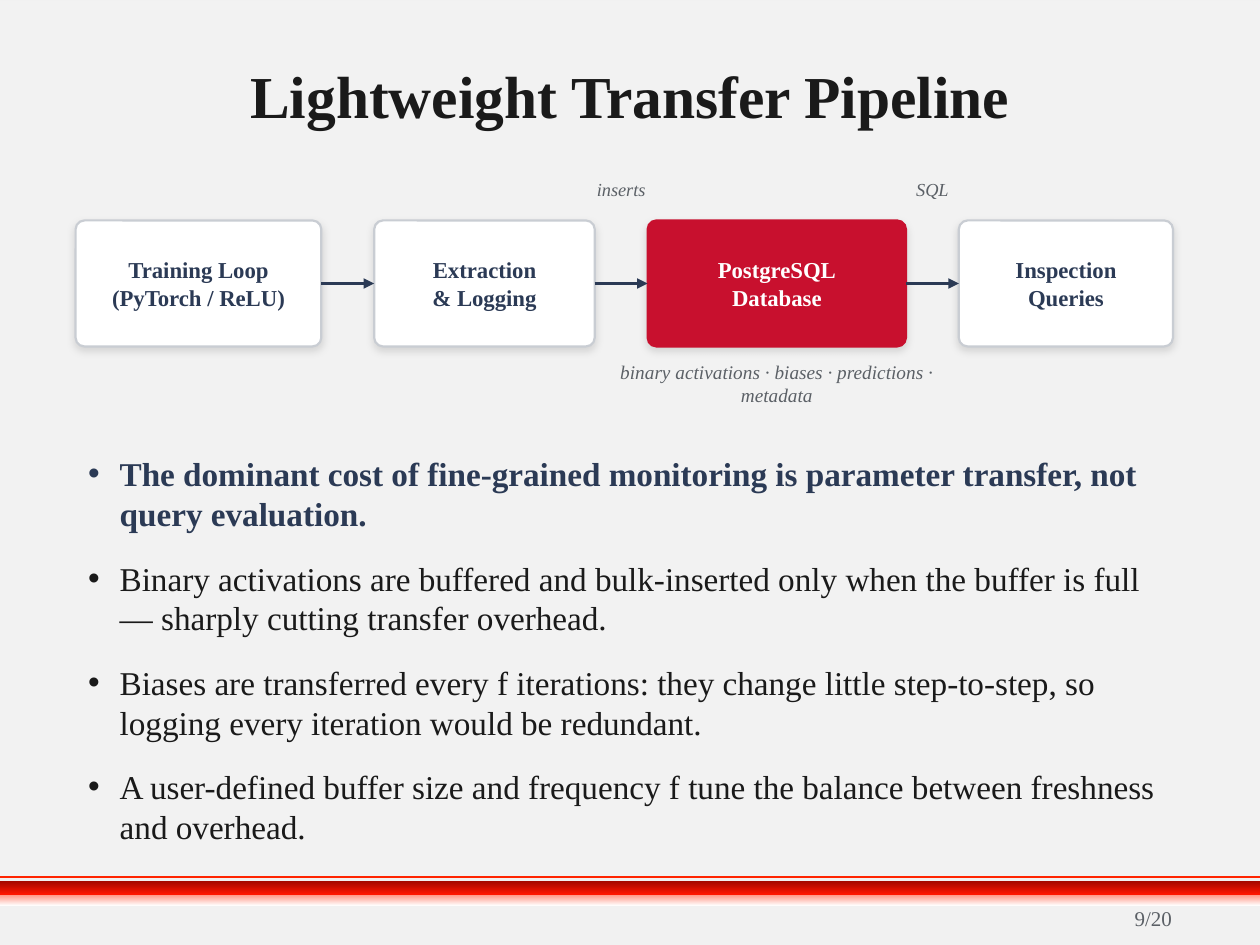
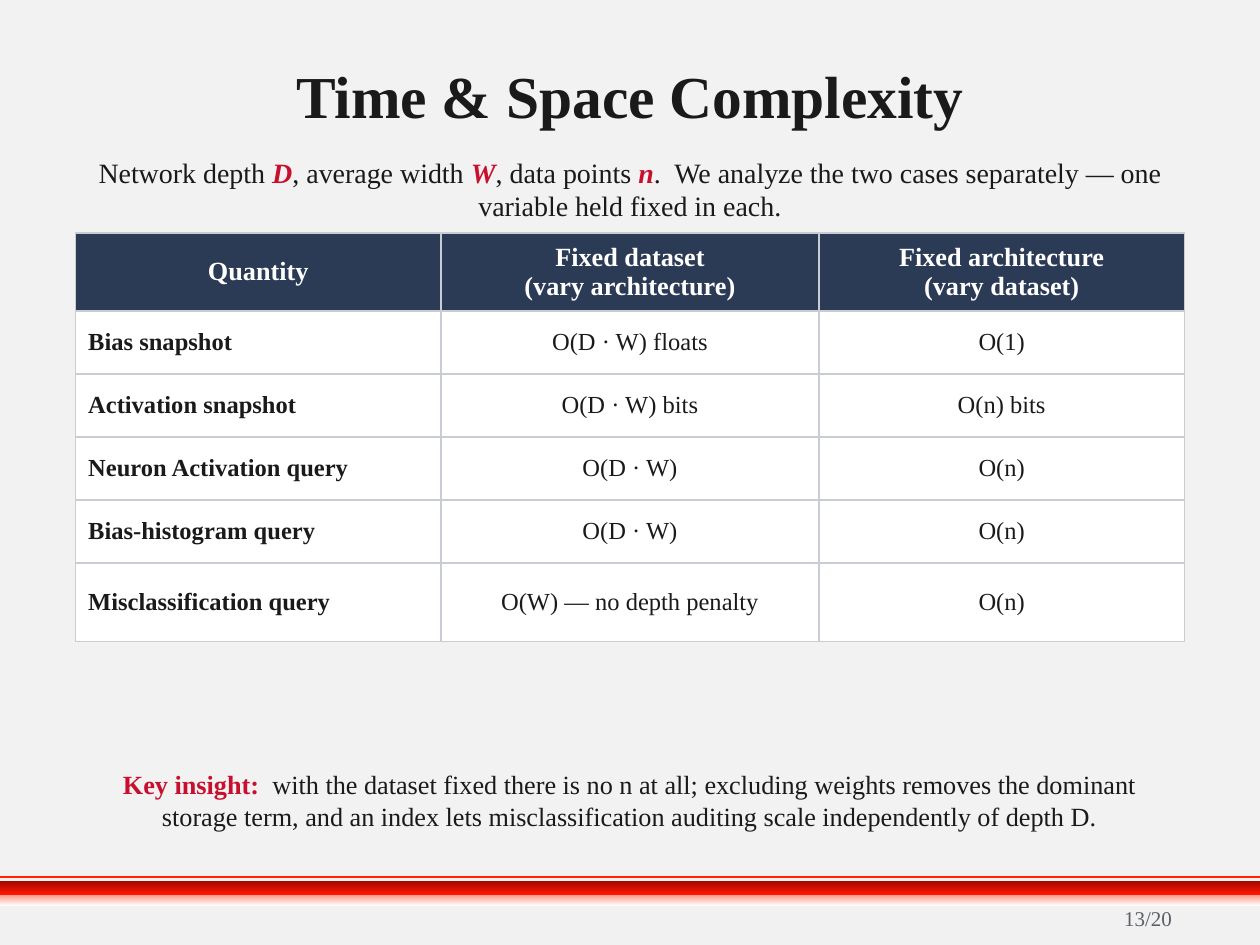
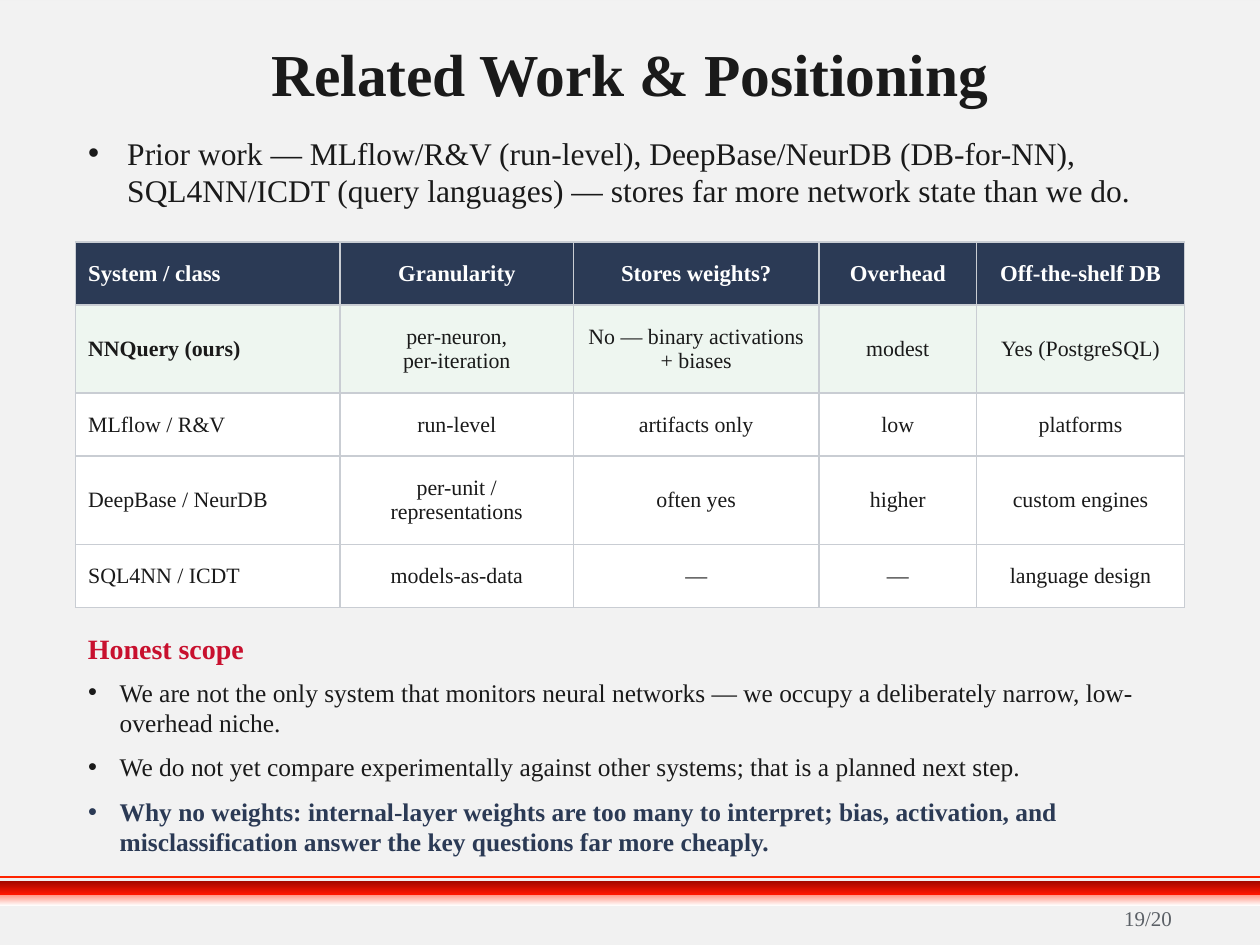
from lxml import etree
from pptx import Presentation
from pptx import util as u
from pptx.dml.color import RGBColor
from pptx.enum import shapes, text
from pptx.oxml import parse_xml
from pptx.oxml.ns import qn

NAVY = RGBColor(0x2B, 0x3A, 0x55)
RED = RGBColor(0xC8, 0x10, 0x2E)
DARK = RGBColor(0x1A, 0x1A, 0x1A)
GREY = RGBColor(0x5B, 0x60, 0x66)
EDGE = RGBColor(0xC9, 0xCD, 0xD3)
WHITE = RGBColor(0xFF, 0xFF, 0xFF)
MINT = RGBColor(0xEE, 0xF6, 0xF0)
PAPER = RGBColor(0xF2, 0xF2, 0xF2)
BACK = RGBColor(0xF1, 0xF1, 0xF1)
FLAME = RGBColor(0xFF, 0x24, 0x00)
RUST = RGBColor(0xA0, 0x08, 0x00)
BLAZE = RGBColor(0xFF, 0x16, 0x00)
FACE = "Times New Roman"
LEFT, MID, RIGHT = text.PP_ALIGN.LEFT, text.PP_ALIGN.CENTER, text.PP_ALIGN.RIGHT
NS = 'xmlns:a="http://schemas.openxmlformats.org/drawingml/2006/main"'

deck = Presentation()
deck.slide_width, deck.slide_height = u.Inches(10), u.Inches(7.5)
COL, ROW = deck.slide_width / 100, deck.slide_height / 75
EDGE_X, SPAN = 6, 88


def spot(x, y, w, h):
    return [u.Emu(round(n)) for n in (x * COL, y * ROW, w * COL, h * ROW)]


def ink(frame, words, size, color, bold=False, side=MID, slant=False, pad=None):
    frame.text = words
    frame.word_wrap = True
    frame.vertical_anchor = text.MSO_ANCHOR.MIDDLE
    if pad is not None:
        frame.margin_left = frame.margin_right = pad
        frame.margin_top = frame.margin_bottom = pad
    for para in frame.paragraphs:
        para.alignment = side
        for run in para.runs:
            font = run.font
            font.name, font.size, font.color.rgb = FACE, u.Pt(size), color
            font.bold, font.italic = bold, slant


pages = []
for kind, name, top, num in [
    (1, "Lightweight Transfer Pipeline", 2.8, "9/20"),
    (5, "Time & Space Complexity", 2.8, "13/20"),
    (3, "Related Work & Positioning", 1, "19/20"),
]:
    page = deck.slides.add_slide(deck.slide_layouts[kind])
    head = page.shapes.title
    head.left, head.top, head.width, head.height = spot(4, top, 92, 9.5)
    ink(head.text_frame, name, 34, DARK, True, pad=0)
    head.text_frame.auto_size = text.MSO_AUTO_SIZE.NONE
    foot = page.shapes.add_textbox(*spot(86, 71.4, 8, 3))
    ink(foot.text_frame, num, 12, GREY, side=RIGHT)
    pages.append(page)
flow, cost, work = pages

master = deck.slide_master
master.background.fill.solid()
master.background.fill.fore_color.rgb = BACK
parts = []
for y, h, tones in [
    (0.1, 69.6, [PAPER]),
    (70.1, 1.8, [FLAME, WHITE]),
    (69.9, 1.1, [RUST, BLAZE]),
]:
    band = flow.shapes.add_shape(shapes.MSO_SHAPE.RECTANGLE, *spot(0, y, 100, h))
    band.shadow.inherit = False
    band.line.fill.background()
    if len(tones) == 1:
        band.fill.solid()
        band.fill.fore_color.rgb = tones[0]
    else:
        band.fill.gradient()
        band.fill.gradient_angle = 270
        for stop, tone in zip(band.fill.gradient_stops, tones):
            stop.color.rgb = tone
    parts.append(band)
x, y, w, h = spot(0, 69.6, 100, 0)
rule = flow.shapes.add_connector(shapes.MSO_CONNECTOR.STRAIGHT, x, y, w, y)
rule.line.color.rgb, rule.line.width = FLAME, u.Pt(0.75)
etree.SubElement(rule.element.spPr, qn("a:effectLst"))
parts.append(rule)
for i, part in enumerate(parts):
    part.element.xpath(".//p:cNvPr")[0].set("id", str(20 + i))
    master.shapes.element.append(part.element)

GAP = 4.2
left, prev = EDGE_X, None
for words, wide, fill, edge, color, note in [
    ("Training Loop\n(PyTorch / ReLU)", 19.5, WHITE, EDGE, NAVY, ""),
    ("Extraction\n& Logging", 17.5, WHITE, EDGE, NAVY, ""),
    ("PostgreSQL\nDatabase", 20.5, RED, RED, WHITE, "inserts"),
    ("Inspection\nQueries", 17, WHITE, EDGE, NAVY, "SQL"),
]:
    step = flow.shapes.add_shape(
        shapes.MSO_SHAPE.ROUNDED_RECTANGLE, *spot(left, 17.5, wide, 10))
    step.adjustments[0] = 0.07
    step.fill.solid()
    step.fill.fore_color.rgb = fill
    step.line.color.rgb, step.line.width = edge, u.Pt(1.25)
    step.shadow.inherit = False
    glow = step.element.spPr.find(qn("a:effectLst"))
    glow.append(parse_xml(
        f'<a:outerShdw {NS} blurRad="{u.Pt(5)}" dist="{u.Pt(2)}" dir="5400000" '
        'algn="bl" rotWithShape="0"><a:srgbClr val="000000">'
        '<a:alpha val="12000"/></a:srgbClr></a:outerShdw>'))
    ink(step.text_frame, words, 13, color, True, pad=0)
    if prev:
        link = flow.shapes.add_connector(shapes.MSO_CONNECTOR.STRAIGHT, 0, 0, 0, 0)
        link.begin_connect(prev, 3)
        link.end_connect(step, 1)
        link.line.color.rgb, link.line.width = NAVY, u.Pt(2)
        etree.SubElement(link.line._get_or_add_ln(), qn("a:tailEnd"), type="triangle")
        etree.SubElement(link.element.spPr, qn("a:effectLst"))
    if note:
        tag = flow.shapes.add_textbox(*spot(left - GAP / 2 - 3.1, 13.3, 6.2, 3.5))
        ink(tag.text_frame, note, 10.5, GREY, slant=True, pad=0)
    if fill == RED:
        tag = flow.shapes.add_textbox(*spot(left + wide / 2 - 15.25, 28.7, 30.5, 3.5))
        ink(tag.text_frame, "binary activations · biases · predictions · metadata",
            11, GREY, slant=True, pad=0)
    left, prev = left + wide + GAP, step

for page, top, wides, talls, sizes, lead, own, data in [
    (cost, 18.5, [29, 30, 29], [6.2, 5, 5, 5, 5, 6.2], (15, 14), MID, None, [
        ["Quantity", "Fixed dataset\n(vary architecture)",
         "Fixed architecture\n(vary dataset)"],
        ["Bias snapshot", "O(D · W) floats", "O(1)"],
        ["Activation snapshot", "O(D · W) bits", "O(n) bits"],
        ["Neuron Activation query", "O(D · W)", "O(n)"],
        ["Bias-histogram query", "O(D · W)", "O(n)"],
        ["Misclassification query", "O(W) — no depth penalty", "O(n)"],
    ]),
    (work, 19.2, [21, 18.5, 19.5, 12.5, 16.5], [5, 7, 5, 7, 5], (13, 12.5), LEFT, 1, [
        ["System / class", "Granularity", "Stores weights?", "Overhead",
         "Off-the-shelf DB"],
        ["NNQuery (ours)", "per-neuron,\nper-iteration",
         "No — binary activations\n+ biases", "modest", "Yes (PostgreSQL)"],
        ["MLflow / R&V", "run-level", "artifacts only", "low", "platforms"],
        ["DeepBase / NeurDB", "per-unit /\nrepresentations", "often yes", "higher",
         "custom engines"],
        ["SQL4NN / ICDT", "models-as-data", "—", "—", "language design"],
    ]),
]:
    grid = page.shapes.add_table(
        len(talls), len(wides), *spot(EDGE_X, top, SPAN, sum(talls))).table
    for col, wide in zip(grid.columns, wides):
        col.width = round(wide * COL)
    for row, tall in zip(grid.rows, talls):
        row.height = round(tall * ROW)
    for r, line in enumerate(data):
        for c, words in enumerate(line):
            cell = grid.cell(r, c)
            cell.fill.solid()
            cell.fill.fore_color.rgb = NAVY if r == 0 else MINT if r == own else WHITE
            cell.vertical_anchor = text.MSO_ANCHOR.MIDDLE
            bold = r == 0 or c == 0 and own in (None, r)
            side = MID if c else lead if r == 0 else LEFT
            ink(cell.text_frame, words, sizes[r > 0], DARK if r else WHITE, bold, side)
            for i, name in enumerate(["lnL", "lnR", "lnT", "lnB"]):
                cell._tc.get_or_add_tcPr().insert(i, parse_xml(
                    f'<a:{name} {NS} w="{u.Pt(1)}"><a:solidFill>'
                    f'<a:srgbClr val="{EDGE}"/></a:solidFill></a:{name}>'))

for y, h, size, slant, bits in [
    (13, 4, 16, True, [
        "Network depth ", "*D", ", average width ", "*W", ", data points ", "*n",
        ".  We analyze the two cases separately — one variable held fixed in each."]),
    (59.5, 8, 15, False, [
        "*Key insight:  ",
        "with the dataset fixed there is no n at all; excluding weights removes the "
        "dominant storage term, and an index lets misclassification auditing scale "
        "independently of depth D."]),
]:
    frame = cost.shapes.add_textbox(*spot(EDGE_X, y, SPAN, h)).text_frame
    ink(frame, "", size, DARK)
    for bit in bits:
        key = bit.startswith("*")
        run = frame.paragraphs[0].add_run()
        run.text = bit.lstrip("*")
        run.font.name, run.font.size = FACE, u.Pt(size)
        run.font.color.rgb = RED if key else DARK
        run.font.bold, run.font.italic = key, key and slant

scope = work.shapes.add_textbox(*spot(EDGE_X, 49.7, SPAN, 3.5))
ink(scope.text_frame, "Honest scope", 16, RED, True, LEFT)

for body, y, h, size, dent, after, key, lines in [
    (flow.placeholders[1], 35.5, 30, 19, 0.25, 14, 0, [
        "The dominant cost of fine-grained monitoring is parameter transfer, not query "
        "evaluation.",
        "Binary activations are buffered and bulk-inserted only when the buffer is full "
        "— sharply cutting transfer overhead.",
        "Biases are transferred every f iterations: they change little step-to-step, so "
        "logging every iteration would be redundant.",
        "A user-defined buffer size and frequency f tune the balance between freshness "
        "and overhead."]),
    (work.placeholders[1], 10.1, 7.1, 18, 0.31, 0, None, [
        "Prior work — MLflow/R&V (run-level), DeepBase/NeurDB (DB-for-NN), SQL4NN/ICDT "
        "(query languages) — stores far more network state than we do."]),
    (work.placeholders[2], 53.2, 15.4, 14.5, 0.25, 8, 2, [
        "We are not the only system that monitors neural networks — we occupy a "
        "deliberately narrow, low-overhead niche.",
        "We do not yet compare experimentally against other systems; that is a planned "
        "next step.",
        "Why no weights: internal-layer weights are too many to interpret; bias, "
        "activation, and misclassification answer the key questions far more cheaply."]),
]:
    body.left, body.top, body.width, body.height = spot(EDGE_X, y, SPAN, h)
    frame = body.text_frame
    ink(frame, "\n".join(lines), size, DARK, side=LEFT)
    frame.vertical_anchor = text.MSO_ANCHOR.TOP
    frame.auto_size = text.MSO_AUTO_SIZE.NONE
    for i, para in enumerate(frame.paragraphs):
        prop = para._p.get_or_add_pPr()
        prop.set("marL", str(u.Inches(dent)))
        prop.set("indent", str(-u.Inches(dent)))
        para.space_before, para.space_after = u.Pt(0), u.Pt(after)
        if i == key:
            para.runs[0].font.bold = True
            para.runs[0].font.color.rgb = NAVY

deck.save("out.pptx")
